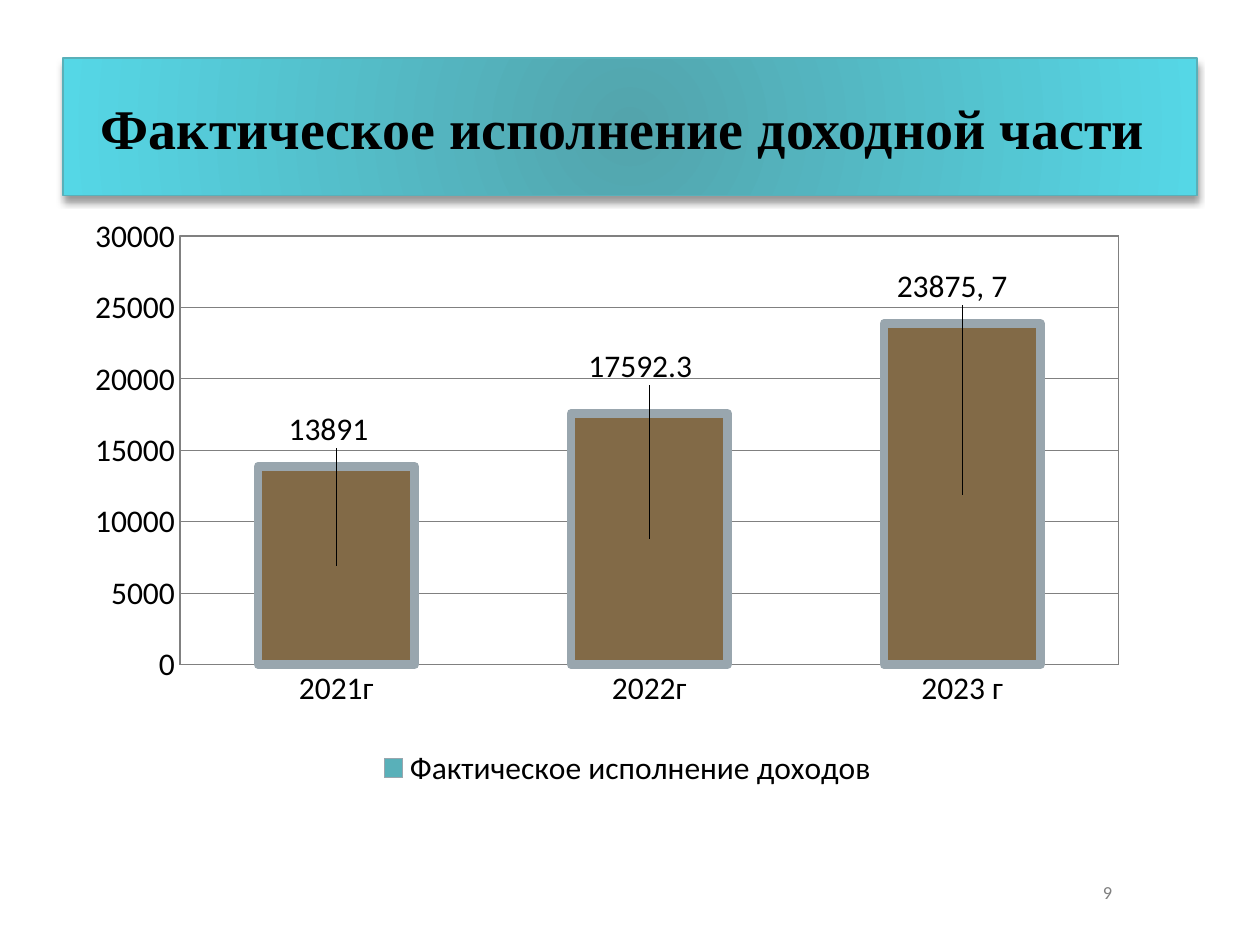
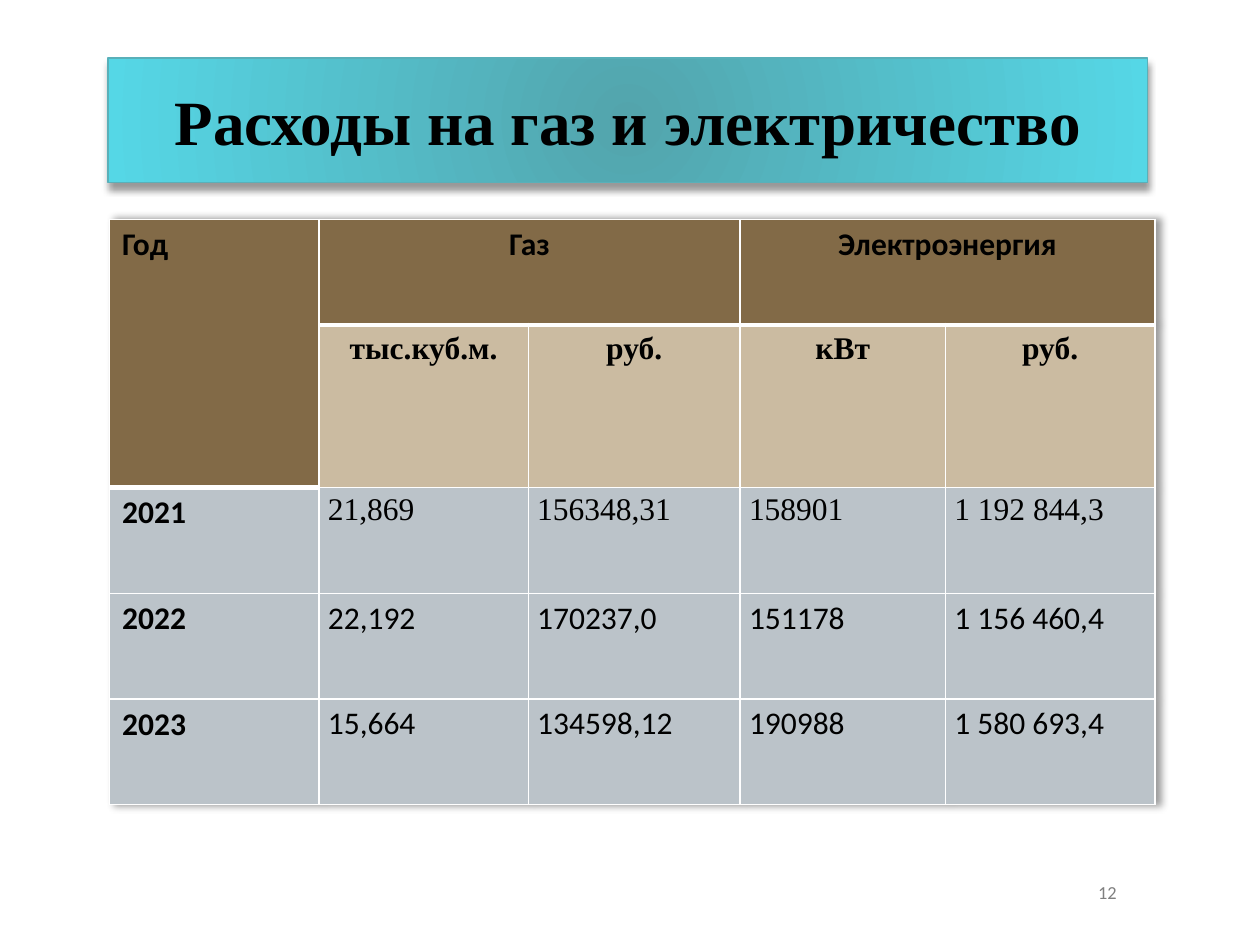
from pptx import Presentation
from pptx.chart.data import CategoryChartData
from pptx.dml.color import RGBColor
from pptx.enum.chart import XL_CHART_TYPE, XL_LEGEND_POSITION, XL_TICK_MARK
from pptx.enum.text import MSO_ANCHOR, PP_ALIGN
from pptx.oxml import parse_xml
from pptx.util import Cm, Pt

COLUMN_STACKED = XL_CHART_TYPE.COLUMN_STACKED
LEGEND_BOTTOM = XL_LEGEND_POSITION.BOTTOM
NO_TICKS = XL_TICK_MARK.NONE
MIDDLE = MSO_ANCHOR.MIDDLE
LEFT, CENTER, JUSTIFY = PP_ALIGN.LEFT, PP_ALIGN.CENTER, PP_ALIGN.JUSTIFY

BLACK, WHITE, GREY = "000000", "FFFFFF", "808080"
TEAL, BROWN, SAND = "59B0B9", "826A47", "CBBBA1"
STEEL, PALE_STEEL = "99A6AE", "BBC3C9"
SANS, SERIF = "Calibri", "Times New Roman"

NAMESPACES = (
    'xmlns:a="http://schemas.openxmlformats.org/drawingml/2006/main" '
    'xmlns:c="http://schemas.openxmlformats.org/drawingml/2006/chart"'
)
TITLE_GRADIENT = (
    '<a:gradFill {ns} rotWithShape="1"><a:gsLst>'
    '<a:gs pos="0"><a:srgbClr val="53A4AC"/></a:gs>'
    '<a:gs pos="100000"><a:srgbClr val="55D7E6"/></a:gs></a:gsLst>'
    '<a:path path="circle"><a:fillToRect l="100000" t="100000" r="100000" b="100000"/></a:path>'
    '</a:gradFill>'
)
SHADOW = (
    '<a:effectLst {ns}><a:outerShdw blurRad="50800" dist="{distance}" dir="{direction}" '
    'rotWithShape="0"><a:srgbClr val="000000"><a:alpha val="40000"/></a:srgbClr>'
    '</a:outerShdw></a:effectLst>'
)
CELL_BORDER = (
    '<a:{side} {ns} w="{width}"><a:solidFill><a:srgbClr val="{color}"/></a:solidFill></a:{side}>'
)
PLOT_LAYOUT = (
    '<c:layout {ns}><c:manualLayout><c:layoutTarget val="inner"/>'
    '<c:xMode val="edge"/><c:yMode val="edge"/><c:x val="0.1"/><c:y val="0.048"/>'
    '<c:w val="0.839"/><c:h val="0.732"/></c:manualLayout></c:layout>'
)
PLOT_BORDER = (
    '<c:spPr {ns}><a:noFill/><a:ln w="9525"><a:solidFill><a:srgbClr val="{color}"/>'
    '</a:solidFill></a:ln></c:spPr>'
)
LABEL_LAYOUT = (
    '<c:layout {ns}><c:manualLayout><c:x val="{x}"/><c:y val="{y}"/></c:manualLayout></c:layout>'
)


def rgb(color):
    return RGBColor.from_string(color)


def element(template, **values):
    """Fill in an XML template and parse it."""
    return parse_xml(template.format(ns=NAMESPACES, **values))


presentation = Presentation()
presentation.slide_width = Cm(25.4)
presentation.slide_height = Cm(19.05)
title_only = presentation.slide_layouts[5]

# Shared title band and slide number
headings = [
    ("Фактическое исполнение доходной части ", 32, (1.27, 1.17, 22.86, 2.77), "9"),
    ("Расходы на газ и электричество", 36, (2.18, 1.17, 20.96, 2.51), "12"),
]
for heading, size, box, number in headings:
    slide = presentation.slides.add_slide(title_only)
    title = slide.shapes.title
    title.left, title.top, title.width, title.height = [Cm(length) for length in box]
    properties = title.element.spPr
    properties.append(element(TITLE_GRADIENT))
    title.line.color.rgb = rgb(TEAL)
    title.line.width = Pt(0.75)
    properties.append(element(SHADOW, distance=43180, direction=5400000))

    number_box = slide.shapes.add_textbox(Cm(21.59), Cm(17.78), Cm(1.47), Cm(0.43))
    frame = number_box.text_frame
    frame.margin_left = frame.margin_right = frame.margin_top = frame.margin_bottom = 0
    for shape, text, font_name, font_size, color, bold in (
        (title, heading, SERIF, size, BLACK, True),
        (number_box, number, SANS, 10.5, GREY, False),
    ):
        shape.text_frame.word_wrap = True
        shape.text_frame.vertical_anchor = MIDDLE
        paragraph = shape.text_frame.paragraphs[0]
        paragraph.alignment = CENTER
        run = paragraph.add_run()
        run.text = text
        run.font.name = font_name
        run.font.size = Pt(font_size)
        run.font.bold = bold
        run.font.color.rgb = rgb(color)

income_slide, expense_slide = presentation.slides

# Income chart
income = CategoryChartData()
income.categories = ["2021г", "2022г", "2023 г"]
income.add_series("Фактическое исполнение доходов", [13891, 17592.3, 23875])
chart = income_slide.shapes.add_chart(
    COLUMN_STACKED, Cm(1.37), Cm(4.19), Cm(22.56), Cm(11.81), income
).chart
chart.has_title = False
chart.font.name = SANS
chart.font.size = Pt(18)
chart.font.color.rgb = rgb(BLACK)
chart.has_legend = True
chart.legend.position = LEGEND_BOTTOM
chart.legend.include_in_layout = False

chart.value_axis.maximum_scale = 30000
chart.value_axis.major_unit = 5000
chart.value_axis.minimum_scale = 0
for axis in (chart.category_axis, chart.value_axis):
    axis.major_tick_mark = axis.minor_tick_mark = NO_TICKS
    axis.format.line.color.rgb = rgb(GREY)
chart.value_axis.has_major_gridlines = True
chart.value_axis.major_gridlines.format.line.color.rgb = rgb(GREY)

plot_area = chart.element.xpath("c:chart/c:plotArea")[0]
for layout in plot_area.xpath("c:layout"):
    plot_area.remove(layout)
plot_area.insert(0, element(PLOT_LAYOUT))
plot_area.append(element(PLOT_BORDER, color=GREY))

plot = chart.plots[0]
plot.gap_width = 100
plot.overlap = 100
plot.vary_by_categories = False
series = plot.series[0]
series.format.fill.solid()
series.format.fill.fore_color.rgb = rgb(TEAL)
series.format.line.color.rgb = rgb(STEEL)
series.format.line.width = Pt(0.75)
series.data_labels.show_value = True

label_offsets = [(-0.007, -0.232), (-0.008, -0.294), (-0.009, -0.355)]
for index, (x, y) in enumerate(label_offsets):
    point = series.points[index]
    point.format.fill.solid()
    point.format.fill.fore_color.rgb = rgb(BROWN)
    point.format.line.color.rgb = rgb(STEEL)
    point.format.line.width = Pt(5)
    point.data_label.font.size = Pt(18)
    label = series.data_labels._element.xpath(f"c:dLbl[c:idx/@val='{index}']")[0]
    label.insert(1, element(LABEL_LAYOUT, x=x, y=y))

run = series.points[2].data_label.text_frame.paragraphs[0].add_run()
run.text = "23875, 7"
run.font.name = SANS
run.font.size = Pt(18)
run.font.color.rgb = rgb(BLACK)

# Expense table
expenses = [
    ["Год", "Газ", "", "Электроэнергия", ""],
    ["", "тыс.куб.м.", "руб.", "кВт", "руб."],
    ["2021", "21,869", "156348,31", "158901", "1 192 844,3"],
    ["2022", "22,192", "170237,0", "151178", "1 156 460,4"],
    ["2023", "15,664", "134598,12", "190988", "1 580 693,4"],
]
column_widths = [4.22, 4.22, 4.27, 4.14, 4.22]
row_heights = [2.13, 3.28, 2.13, 2.13, 2.13]
table = expense_slide.shapes.add_table(
    5, 5, Cm(2.21), Cm(4.42), Cm(sum(column_widths)), Cm(sum(row_heights))
).table
table._tbl.tblPr.insert(0, element(SHADOW, distance=38100, direction=0))
for column, width in zip(table.columns, column_widths):
    column.width = Cm(width)
for row, height in zip(table.rows, row_heights):
    row.height = Cm(height)
for first, last in (((0, 0), (1, 0)), ((0, 1), (0, 2)), ((0, 3), (0, 4))):
    table.cell(*first).merge(table.cell(*last))

for row_index, row_texts in enumerate(expenses):
    for column_index, text in enumerate(row_texts):
        cell = table.cell(row_index, column_index)
        is_year = column_index == 0
        is_value = row_index > 1 and not is_year
        header_end = 1 if is_year else 0

        cell_properties = cell._tc.get_or_add_tcPr()
        for side, edge_row in (("lnL", None), ("lnR", None),
                               ("lnT", row_index - 1), ("lnB", row_index)):
            points = 3 if edge_row == header_end else 1
            cell_properties.append(
                element(CELL_BORDER, side=side, width=Pt(points), color=WHITE)
            )
        cell.fill.solid()
        if row_index > 1:
            cell.fill.fore_color.rgb = rgb(PALE_STEEL)
        elif row_index == 0 or is_year:
            cell.fill.fore_color.rgb = rgb(BROWN)
        else:
            cell.fill.fore_color.rgb = rgb(SAND)
        if not text:
            continue

        paragraph = cell.text_frame.paragraphs[0]
        paragraph.alignment = LEFT if is_year else CENTER
        if is_value:
            cell.margin_left = cell.margin_right = Cm(0.18)
            cell.margin_top = cell.margin_bottom = 0
            paragraph.alignment = JUSTIFY
            paragraph.line_spacing = 1.15
        run = paragraph.add_run()
        run.text = text
        run.font.name = SERIF if row_index in (1, 2) and not is_year else SANS
        run.font.size = Pt(18)
        run.font.bold = not is_value
        run.font.color.rgb = rgb(BLACK)

presentation.save("out.pptx")
